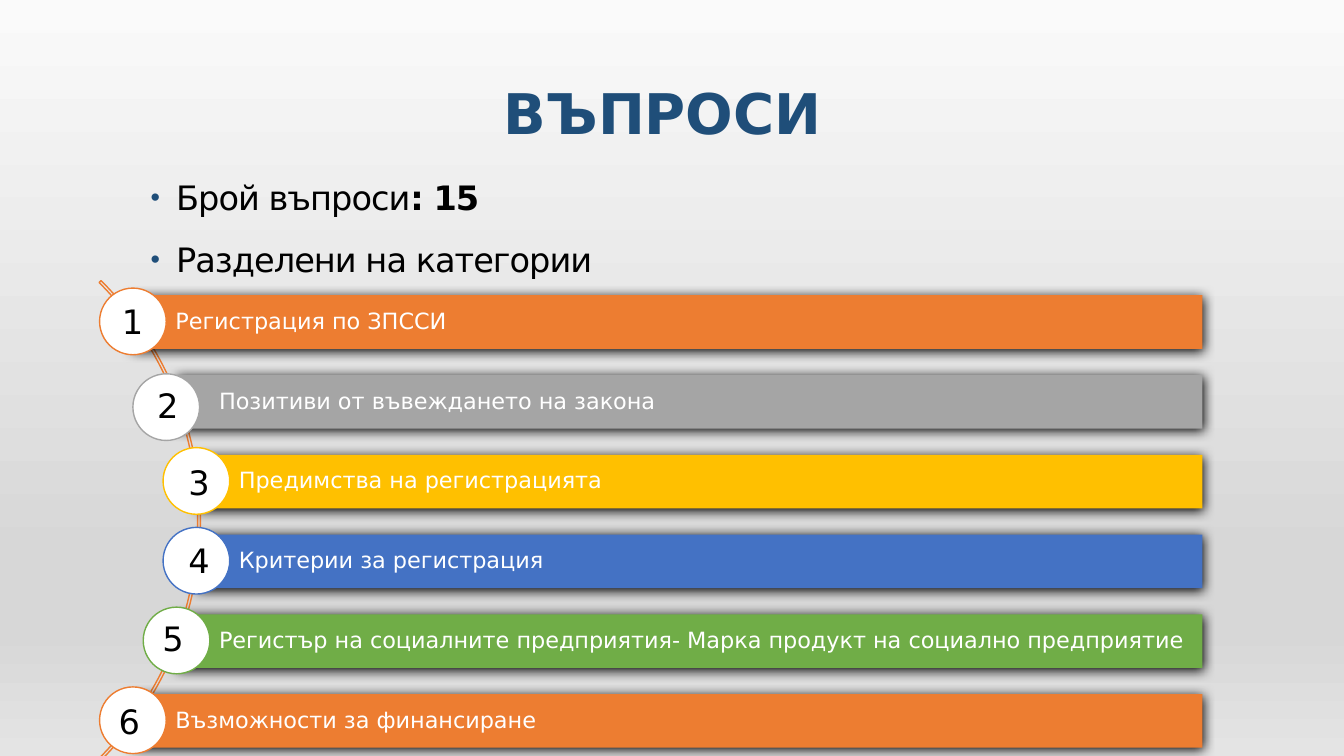
from pptx import Presentation
from pptx.dml.color import RGBColor
from pptx.enum.shapes import MSO_SHAPE
from pptx.enum.text import MSO_ANCHOR, PP_ALIGN
from pptx.oxml.ns import qn
from pptx.oxml.xmlchemy import OxmlElement
from pptx.util import Cm, Pt

RECT, OVAL, ARC = MSO_SHAPE.RECTANGLE, MSO_SHAPE.OVAL, MSO_SHAPE.BLOCK_ARC
TOP, MIDDLE, BOTTOM = MSO_ANCHOR.TOP, MSO_ANCHOR.MIDDLE, MSO_ANCHOR.BOTTOM
LEFT, CENTER = PP_ALIGN.LEFT, PP_ALIGN.CENTER

FONT = "DejaVu Sans"
COLORS = {
    "navy": "1F4E79", "black": "000000", "white": "FFFFFF",
    "orange": "ED7D31", "gray": "A5A5A5", "yellow": "FFC000",
    "blue": "4472C4", "green": "70AD47",
}
BACKGROUND = [(0, "FAFAFA"), (74, "D7D7D7"), (83, "D7D7D7"), (100, "E4E4E4")]

TITLE = {"size": Pt(40), "bold": True}
BODY = {"size": Pt(24), "bold": False}
BODY_BOLD = {"size": Pt(24), "bold": True}
LABEL = {"size": Pt(16)}
NUMBER = {"size": Pt(24)}

# Bars share a right edge and a row pitch (cm)
BAR_RIGHT, BAR_TOP, BAR_HEIGHT, PITCH = 30.3, 7.44, 1.35, 2.01
CIRCLE = 1.68

# Label, colour, bar left, circle left, circle rise, number left, number top
CATEGORIES = [
    ("Регистрация по ЗПССИ", "orange", 3.35, 2.51, 0.18, 2.82, 7.57),
    ("Позитиви от въвеждането на закона", "gray", 4.45, 3.35, 0.03, 3.71, 9.68),
    ("Предимства на регистрацията", "yellow", 4.95, 4.11, 0.18, 4.5, 11.63),
    ("Критерии за регистрация", "blue", 4.95, 4.11, 0.18, 4.5, 13.59),
    ("Регистър на социалните предприятия- Марка продукт на социално предприятие",
     "green", 4.45, 3.61, 0.18, 3.84, 15.57),
    ("Възможности за финансиране", "orange", 3.35, 2.51, 0.18, 2.74, 17.65),
]


def rgb(name):
    return RGBColor.from_string(COLORS[name])


def add_element(parent, tag, **attrs):
    el = OxmlElement(tag)
    for key, value in attrs.items():
        el.set(key, str(value))
    parent.append(el)
    return el


def set_background(s):
    fill = s.background.fill
    fill.gradient()
    fill.gradient_angle = 270
    stops = s.element.find(".//" + qn("a:gsLst"))
    for stop in list(stops):
        stops.remove(stop)
    for pos, color in BACKGROUND:
        stop = add_element(stops, "a:gs", pos=pos * 1000)
        add_element(stop, "a:srgbClr", val=color)


def add_run(p, text, fmt, color):
    r = p.add_run()
    r.text = text
    r.font.name = FONT
    r.font.color.rgb = rgb(color)
    for key, value in fmt.items():
        setattr(r.font, key, value)
    return r


def set_text(sp, text, fmt, color, anchor=TOP, align=LEFT):
    tf = sp.text_frame
    tf.word_wrap = True
    tf.vertical_anchor = anchor
    p = tf.paragraphs[0]
    p.alignment = align
    p.line_spacing = 0.9
    add_run(p, text, fmt, color)
    return tf


def add_text(s, box, *args, **kwargs):
    sp = s.shapes.add_textbox(*map(Cm, box))
    return set_text(sp, *args, **kwargs)


def add_shape(s, kind, box, fill=None, line=None):
    sp = s.shapes.add_shape(kind, *map(Cm, box))
    sp.shadow.inherit = False
    if fill:
        sp.fill.solid()
        sp.fill.fore_color.rgb = rgb(fill)
    else:
        sp.fill.background()
    if line:
        sp.line.color.rgb = rgb(line)
        sp.line.width = Pt(1)
    else:
        sp.line.fill.background()
    return sp


def add_shadow(sp):
    effects = sp.element.spPr.find(qn("a:effectLst"))
    shadow = add_element(effects, "a:outerShdw", blurRad=Pt(8.5), dist=Pt(1),
                         dir=90 * 60000, algn="ctr", rotWithShape=0)
    add_element(shadow, "a:srgbClr", val=COLORS["black"])


def add_bullets(s, box, items):
    sp = s.shapes.add_textbox(*map(Cm, box))
    tf = sp.text_frame
    tf.word_wrap = True
    for i, runs in enumerate(items):
        p = tf.add_paragraph() if i else tf.paragraphs[0]
        p.line_spacing = 0.9
        p.space_before = Pt(18)
        pPr = p._p.get_or_add_pPr()
        pPr.set("marL", str(Cm(0.76)))
        pPr.set("indent", str(Cm(-0.64)))
        color = add_element(pPr, "a:buClr")
        add_element(color, "a:srgbClr", val=COLORS["navy"])
        add_element(pPr, "a:buSzPct", val=80000)
        add_element(pPr, "a:buFont", typeface="Arial")
        add_element(pPr, "a:buChar", char="•")
        for text, fmt in runs:
            r = add_run(p, text, fmt, "black")
            r.font._element.set("spc", "-70")


def add_category(s, row, label, color, left, circle_left, rise, num_left, num_top):
    top = BAR_TOP + row * PITCH
    bar = add_shape(s, RECT, (left, top, BAR_RIGHT - left, BAR_HEIGHT), fill=color)
    add_shadow(bar)
    tf = set_text(bar, label, LABEL, "white", anchor=MIDDLE)
    margins = {"margin_left": 1.07, "margin_top": 0.1,
               "margin_right": 0.1, "margin_bottom": 0.1}
    for key, value in margins.items():
        setattr(tf, key, Cm(value))
    add_shape(s, OVAL, (circle_left, top - rise, CIRCLE, CIRCLE),
              fill="white", line=color)
    add_text(s, (num_left, num_top, 1.02, 1.17), str(row + 1), NUMBER, "black")


def main():
    prs = Presentation()
    prs.slide_width, prs.slide_height = Cm(33.87), Cm(19.05)
    s = prs.slides.add_slide(prs.slide_layouts[6])
    set_background(s)

    # Title and introduction
    add_text(s, (3.39, 1.91, 27.09, 1.91), "ВЪПРОСИ ", TITLE, "navy",
             anchor=BOTTOM, align=CENTER)
    add_bullets(s, (3.43, 4.45, 16.69, 12.7), [
        [("Брой въпроси", BODY), (": 15", BODY_BOLD)],
        [("Разделени на категории", BODY)],
    ])

    # Curve behind the numbered categories
    arc = add_shape(s, ARC, (-12.04, 4.57, 17.09, 17.09), line="orange")
    for i, value in enumerate((189, 27, 0.004)):
        arc.adjustments[i] = value

    for row, category in enumerate(CATEGORIES):
        add_category(s, row, *category)

    prs.save("out.pptx")


if __name__ == "__main__":
    main()
